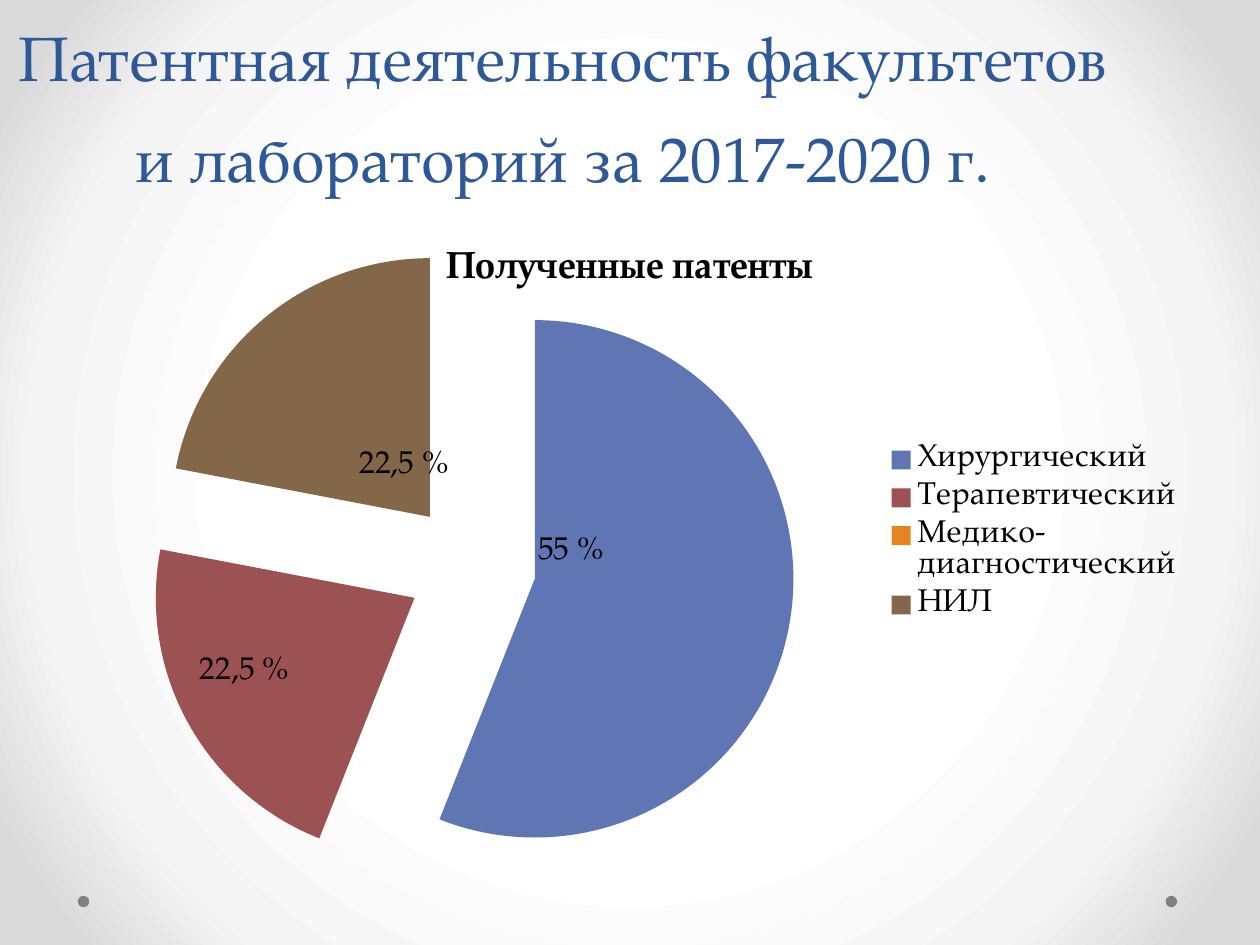
from lxml.etree import SubElement
from pptx import Presentation
from pptx.chart.data import CategoryChartData
from pptx.dml.color import RGBColor
from pptx.enum.chart import XL_CHART_TYPE, XL_LABEL_POSITION, XL_LEGEND_POSITION
from pptx.enum.shapes import MSO_SHAPE
from pptx.enum.text import MSO_ANCHOR, PP_ALIGN
from pptx.oxml import parse_xml
from pptx.oxml.ns import qn
from pptx.util import Cm, Pt

FONT = "TeX Gyre Pagella"
COLORS = {
    "title": "2F5897",
    "text": "000000",
    "dot": "808080",
    "Хирургический": "6076B4",
    "Терапевтический": "9C5252",
    "Медико-диагностический": "E68422",
    "НИЛ": "846648",
}
BACKGROUND_STOPS = {50: "FFFFFF", 76: "F4F4F4", 92: "DADADA"}
PATENTS = {
    "Хирургический": 56,
    "Терапевтический": 22,
    "Медико-диагностический": 0,
    "НИЛ": 22,
}
LABELS = {
    "Хирургический": ("55 %", -0.08, -0.08),
    "Терапевтический": ("22,5 %", -0.05, 0.02),
    "НИЛ": ("22,5 %", 0.05, 0.08),
}


def color(name):
    return RGBColor.from_string(COLORS[name])


def apply_format(target, values):
    for name, value in values.items():
        setattr(target, name, value)


def style_font(font, size, color_name, bold=False):
    apply_format(font, {"name": FONT, "size": Pt(size), "bold": bold})
    font.color.rgb = color(color_name)


def manual_layout(**values):
    layout = parse_xml(
        '<c:layout xmlns:c="http://schemas.openxmlformats.org/drawingml/2006/chart">'
        "<c:manualLayout/></c:layout>"
    )
    for name, value in values.items():
        SubElement(layout[0], qn(f"c:{name}")).set("val", str(value))
    return layout


def paint_background(page):
    page.background.fill.gradient()
    gradient = page.element.find(".//" + qn("a:gradFill"))
    for child in list(gradient):
        gradient.remove(child)
    stops = SubElement(gradient, qn("a:gsLst"))
    for position, value in BACKGROUND_STOPS.items():
        stop = SubElement(stops, qn("a:gs"), pos=str(position * 1000))
        SubElement(stop, qn("a:srgbClr"), val=value)
    circle = SubElement(gradient, qn("a:path"), path="circle")
    SubElement(circle, qn("a:fillToRect"), dict.fromkeys("ltrb", "50000"))


def add_dot(page, left):
    dot = page.shapes.add_shape(MSO_SHAPE.OVAL, left, Cm(18.06), Cm(0.23), Cm(0.23))
    dot.shadow.inherit = False
    dot.fill.solid()
    dot.fill.fore_color.rgb = color("dot")
    dot.line.fill.background()


def add_title(page, text):
    box = page.shapes.add_textbox(0, 0, Cm(22.7), Cm(4.06))
    frame = box.text_frame
    apply_format(frame, {"word_wrap": True, "vertical_anchor": MSO_ANCHOR.BOTTOM})
    para = frame.paragraphs[0]
    apply_format(para, {"alignment": PP_ALIGN.CENTER, "line_spacing": Pt(58)})
    span = para.add_run()
    span.text = text
    style_font(span.font, 36, "title")


def add_label(point, text, x, y):
    label = point.data_label
    frame = label.text_frame
    frame.text = text
    style_font(frame.paragraphs[0].runs[0].font, 18, "text")
    label.position = XL_LABEL_POSITION.CENTER


def place_label(series, index, x, y):
    for label in series._element.iter(qn("c:dLbl")):
        if label.find(qn("c:idx")).get("val") == str(index):
            label.find(qn("c:idx")).addnext(manual_layout(x=x, y=y))


def explode(series, percent):
    for point in series._element.findall(qn("c:dPt")):
        explosion = point.makeelement(qn("c:explosion"), val=str(percent))
        point.find(qn("c:spPr")).addprevious(explosion)


def add_pie(page, title):
    data = CategoryChartData()
    data.categories = list(PATENTS)
    data.add_series("Series 1", list(PATENTS.values()))
    chart = page.shapes.add_chart(
        XL_CHART_TYPE.PIE, Cm(1.27), Cm(4.45), Cm(22.86), Cm(12.57), data
    ).chart
    style_font(chart.font, 18, "text")

    chart.has_title = True
    frame = chart.chart_title.text_frame
    frame.text = title
    style_font(frame.paragraphs[0].runs[0].font, 21.6, "text", bold=True)

    chart.has_legend = True
    apply_format(
        chart.legend,
        {"position": XL_LEGEND_POSITION.RIGHT, "include_in_layout": False},
    )

    plot = chart.plots[0]
    plot.vary_by_categories = True
    series = plot.series[0]
    for index, name in enumerate(PATENTS):
        point = series.points[index]
        point.format.fill.solid()
        point.format.fill.fore_color.rgb = color(name)
        if name in LABELS:
            text, x, y = LABELS[name]
            add_label(point, text, x, y)
            place_label(series, index, x, y)
    apply_format(series.data_labels, {"show_value": False})
    explode(series, 25)

    area = chart._chartSpace.find(".//" + qn("c:plotArea"))
    for layout in area.findall(qn("c:layout")):
        area.remove(layout)
    area.insert(0, manual_layout(
        layoutTarget="inner", xMode="edge", yMode="edge",
        x=0.13, y=0.14, w=0.46, h=0.83,
    ))


def main():
    deck = Presentation()
    apply_format(deck, {"slide_width": Cm(25.4), "slide_height": Cm(19.05)})
    page = deck.slides.add_slide(deck.slide_layouts[6])
    paint_background(page)
    for left in (Cm(23.5), Cm(1.57)):
        add_dot(page, left)
    add_title(page, "Патентная деятельность факультетов и лабораторий за 2017-2020 г.")
    add_pie(page, "Полученные патенты")
    deck.save("out.pptx")


if __name__ == "__main__":
    main()
